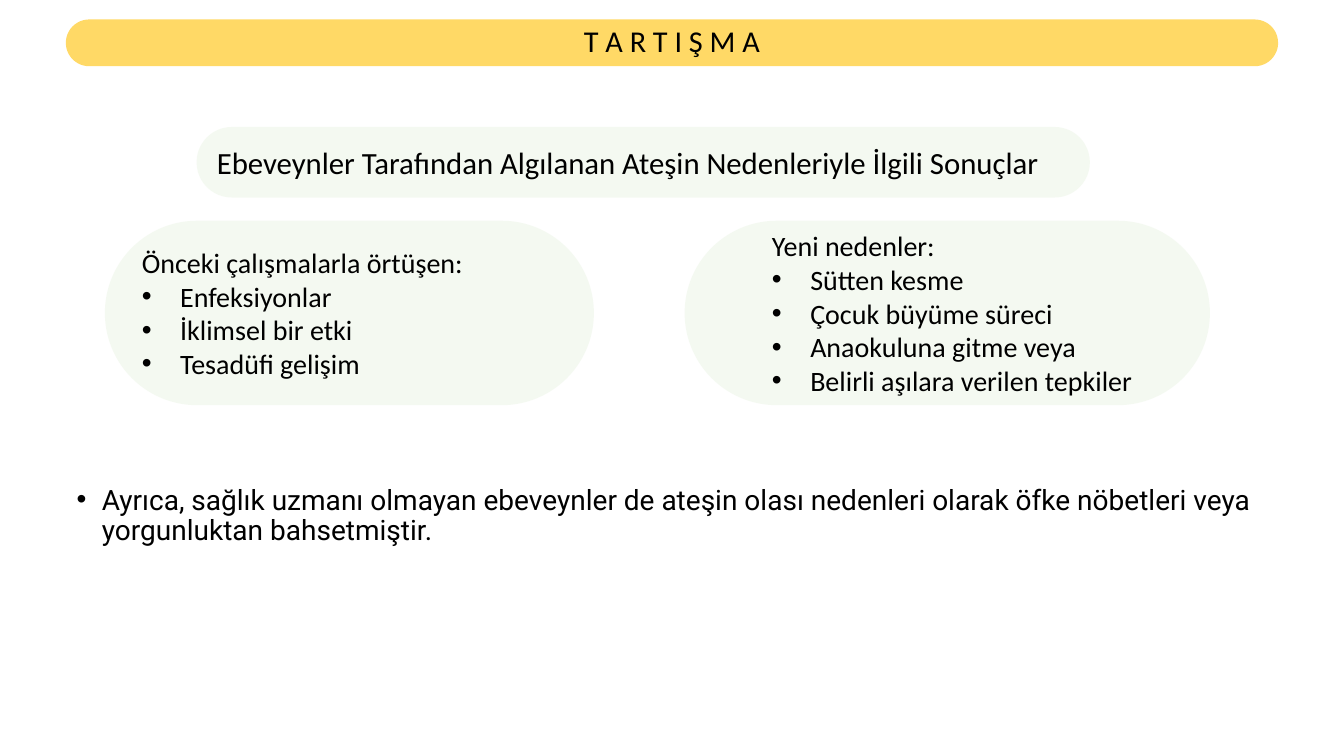
from lxml.etree import SubElement
from pptx import Presentation
from pptx.dml.color import RGBColor
from pptx.enum.shapes import MSO_SHAPE as Shape
from pptx.enum.text import MSO_ANCHOR as Anchor, MSO_AUTO_SIZE as AutoSize, PP_ALIGN as Align
from pptx.oxml.ns import qn
from pptx.util import Inches, Pt

BLACK = "000000"
YELLOW = "FFD966"
GREEN = "E2F0D9"
LEFT, WIDTH = 0.66, 12.01


def color(value):
    return RGBColor.from_string(value)


def place(shape, left, top, width, height):
    shape.left, shape.top = Inches(left), Inches(top)
    shape.width, shape.height = Inches(width), Inches(height)


def indent(para, margin, first=0.0, bullet=False):
    """Set the left margin and first-line indent, with an optional bullet."""
    props = para._p.get_or_add_pPr()
    props.set("marL", str(Inches(margin)))
    props.set("indent", str(Inches(first)))
    if bullet:
        SubElement(props, qn("a:buFont")).set("typeface", "Arial")
        SubElement(props, qn("a:buChar")).set("char", "•")


def format_runs(para, size, font="Calibri"):
    for span in para.runs:
        span.font.size = Pt(size)
        span.font.name = font
        span.font.color.rgb = color(BLACK)


def add_pill(page, left, top, width, height, fill, opacity=100):
    pill = page.shapes.add_shape(Shape.ROUNDED_RECTANGLE, 0, 0, 0, 0)
    place(pill, left, top, width, height)
    pill.adjustments[0] = 0.5
    pill.shadow.inherit = False
    pill.fill.solid()
    pill.fill.fore_color.rgb = color(fill)
    pill.line.fill.background()
    if opacity < 100:
        tint = pill._element.spPr.find(qn("a:solidFill"))[0]
        SubElement(tint, qn("a:alpha")).set("val", str(opacity * 1000))
    return pill


def add_card(page, left, top, width, height, heading, items=(), size=20, level=0):
    """Add a pale pill with a heading and a bulleted list."""
    frame = add_pill(page, left, top, width, height, GREEN, 36).text_frame
    frame.word_wrap = True
    frame.vertical_anchor = Anchor.MIDDLE
    frame.text = "\n".join([heading, *items])
    margin = 0.5 * level
    for number, para in enumerate(frame.paragraphs):
        para.level = level
        para.alignment = Align.LEFT
        if number:
            indent(para, margin + 0.38, -0.38, bullet=True)
        else:
            indent(para, margin)
        format_runs(para, size)


def fill_placeholder(holder, text, box, size, font):
    place(holder, *box)
    frame = holder.text_frame
    frame.text = text
    frame.word_wrap = True
    frame.auto_size = AutoSize.NONE
    para = frame.paragraphs[0]
    para.line_spacing = 0.9
    para.space_before = Pt(0)
    format_runs(para, size, font)
    return para


def add_title(page):
    box = (LEFT, 0.2, WIDTH, 0.45)
    bar = add_pill(page, *box, YELLOW)
    bar.line.color.rgb = color(YELLOW)
    bar.line.width = Pt(1)
    title = page.shapes.title
    title._element.addprevious(bar._element)
    para = fill_placeholder(title, "T A R T I Ş M A", box, 21.6, "Calibri")
    para.alignment = Align.CENTER
    title.text_frame.vertical_anchor = Anchor.MIDDLE


def add_body(page):
    text = ("Ayrıca, sağlık uzmanı olmayan ebeveynler de ateşin olası nedenleri "
            "olarak öfke nöbetleri veya yorgunluktan bahsetmiştir.")
    para = fill_placeholder(page.placeholders[1], text, (LEFT, 4.77, WIDTH, 0.8), 20, "Roboto")
    indent(para, 0.25, -0.25, bullet=True)


def main():
    deck = Presentation()
    deck.slide_width, deck.slide_height = Inches(13.33), Inches(7.5)
    page = deck.slides.add_slide(deck.slide_layouts[1])
    add_title(page)
    add_body(page)
    add_card(page, 1.95, 1.26, 8.86, 0.7,
             "Ebeveynler Tarafından Algılanan Ateşin Nedenleriyle İlgili Sonuçlar", size=22)
    add_card(page, 1.04, 2.19, 4.85, 1.83, "Önceki çalışmalarla örtüşen:",
             ["Enfeksiyonlar", "İklimsel bir etki", "Tesadüfi gelişim"])
    add_card(page, 6.79, 2.19, 5.21, 1.83, "Yeni nedenler:",
             ["Sütten kesme", "Çocuk büyüme süreci", "Anaokuluna gitme veya",
              "Belirli aşılara verilen tepkiler"], level=1)
    deck.save("out.pptx")


if __name__ == "__main__":
    main()
